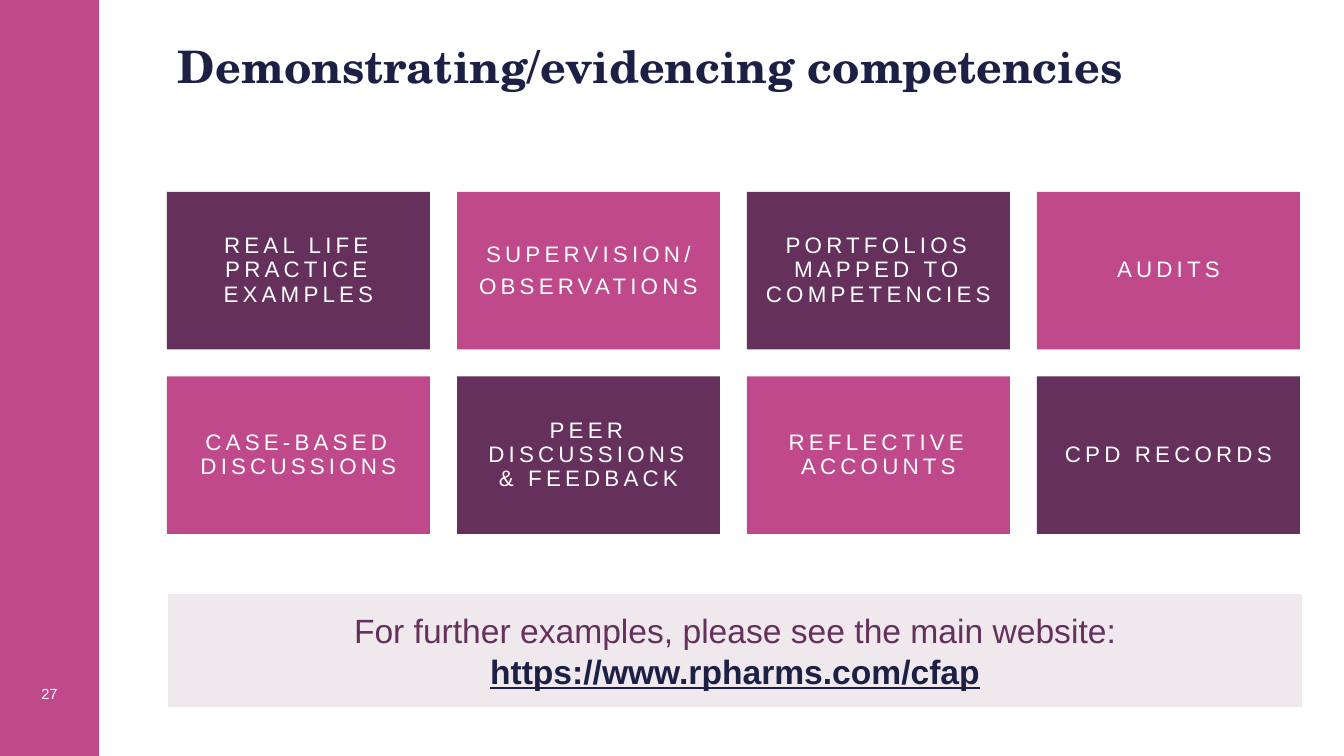
from itertools import product

from pptx import Presentation
from pptx.dml.color import RGBColor
from pptx.enum.shapes import MSO_SHAPE
from pptx.enum.text import MSO_ANCHOR, PP_ALIGN
from pptx.oxml.ns import qn
from pptx.util import Pt
from lxml.etree import SubElement

EMU_PER_PX = 914400 / 100.8
PINK, PURPLE, NAVY, WHITE = "BF498A", "65305C", "1C2045", "FFFFFF"

TILES = [
    ["REAL LIFE PRACTICE EXAMPLES", "SUPERVISION/\nOBSERVATIONS",
     "PORTFOLIOS MAPPED TO COMPETENCIES", "AUDITS"],
    ["CASE-BASED DISCUSSIONS", "PEER DISCUSSIONS\v& FEEDBACK",
     "REFLECTIVE ACCOUNTS", "CPD RECORDS"],
]


def px(length):
    return round(length * EMU_PER_PX)


def color(value):
    return RGBColor.from_string(value)


def add_panel(slide, left, top, width, height, fill):
    shape = slide.shapes.add_shape(
        MSO_SHAPE.RECTANGLE, px(left), px(top), px(width), px(height))
    shape.shadow.inherit = False
    shape.fill.solid()
    shape.fill.fore_color.rgb = color(fill)
    shape.line.fill.background()
    return shape


def set_text(shape, text, size, text_color, inset, font="Arial", bold=False,
             align=PP_ALIGN.CENTER, anchor=MSO_ANCHOR.MIDDLE):
    frame = shape.text_frame
    frame.word_wrap = True
    frame.vertical_anchor = anchor
    frame.margin_left = frame.margin_right = px(inset)
    frame.margin_top = frame.margin_bottom = px(min(inset, 16))
    frame.text = text
    for paragraph in frame.paragraphs:
        paragraph.alignment = align
        for run in paragraph.runs:
            run.font.name = font
            run.font.size = Pt(size)
            run.font.bold = bold
            run.font.color.rgb = color(text_color)
    return frame


def add_sidebar(slide, left, top, width, height):
    add_panel(slide, left, top, width, height, PINK)
    number = slide.shapes.add_textbox(
        px(left), px(top + 679), px(width), px(29))
    set_text(number, "27", 10.5, WHITE, 5)


def place_title(slide, left, top, width, height):
    title = slide.shapes.title
    title.left, title.top = px(left), px(top)
    title.width, title.height = px(width), px(height)
    frame = set_text(title, "Demonstrating/evidencing competencies", 32, NAVY,
                     10, "TeX Gyre Schola", True, PP_ALIGN.LEFT,
                     MSO_ANCHOR.TOP)
    frame.margin_top = frame.margin_bottom = px(5)
    frame.paragraphs[0].line_spacing = 0.9


def add_tile_grid(slide, left, top, width, height):
    rows, columns, gap = len(TILES), len(TILES[0]), 27
    tile_width = (width - gap * (columns - 1)) / columns
    tile_height = (height - gap * (rows - 1)) / rows
    for row, column in product(range(rows), range(columns)):
        # Colours alternate like a chessboard
        fill = PINK if (row + column) % 2 else PURPLE
        tile = add_panel(slide, left + column * (tile_width + gap),
                         top + row * (tile_height + gap),
                         tile_width, tile_height, fill)
        frame = set_text(tile, TILES[row][column], 16, WHITE, 12)
        for paragraph in frame.paragraphs:
            paragraph.line_spacing = 0.9
            paragraph.space_after = Pt(5.6)
            for run in paragraph.runs:
                run.font._element.set("spc", "300")


def add_website_note(slide, left, top, width, height):
    note = add_panel(slide, left, top, width, height, PURPLE)
    # Ten percent opacity
    fill_color = note._element.spPr.find(qn("a:solidFill"))[0]
    SubElement(fill_color, qn("a:alpha")).set("val", "10000")
    frame = set_text(
        note, "For further examples, please see the main website:"
        "\vhttps://www.rpharms.com/cfap", 24, PURPLE, 16)
    address = frame.paragraphs[0].runs[1].font
    address.bold = address.underline = True
    address.color.rgb = color(NAVY)


def main():
    presentation = Presentation()
    presentation.slide_width = px(1344)
    presentation.slide_height = px(756)
    slide = presentation.slides.add_slide(presentation.slide_layouts[5])
    add_sidebar(slide, 0, 0, 99, 756)
    place_title(slide, 168, 40, 982, 43)
    add_tile_grid(slide, 167, 192, 1133, 342)
    add_website_note(slide, 168, 594, 1134, 113)
    presentation.save("out.pptx")


if __name__ == "__main__":
    main()
